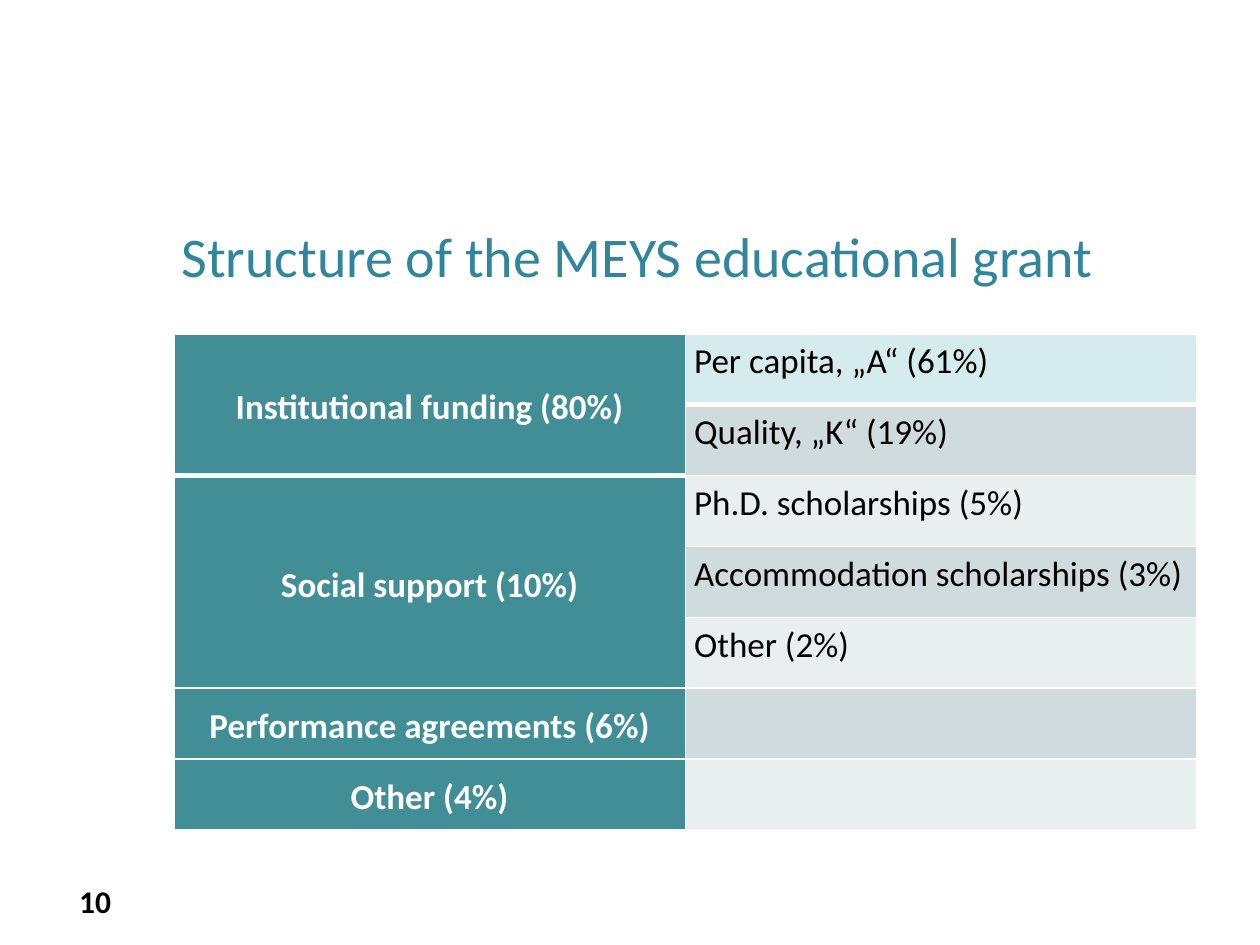
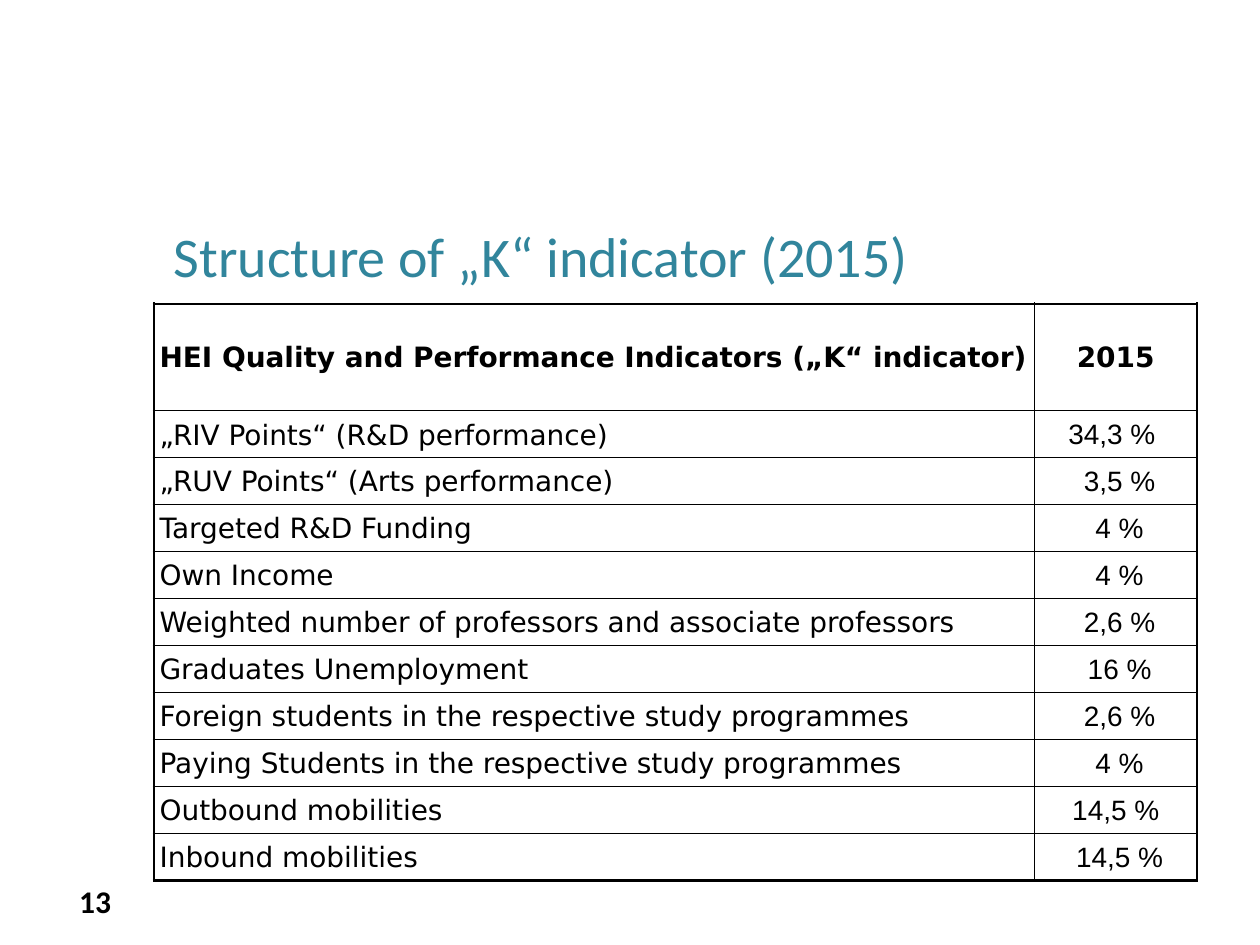
from lxml import etree
from pptx import Presentation
from pptx.dml.color import RGBColor
from pptx.enum.text import MSO_ANCHOR, PP_ALIGN
from pptx.oxml.ns import qn
from pptx.util import Pt

TOP, MIDDLE = MSO_ANCHOR.TOP, MSO_ANCHOR.MIDDLE
LEFT, CENTER = PP_ALIGN.LEFT, PP_ALIGN.CENTER
RIGHT, JUSTIFY = PP_ALIGN.RIGHT, PP_ALIGN.JUSTIFY

BLACK = RGBColor(0x00, 0x00, 0x00)
WHITE = RGBColor(0xFF, 0xFF, 0xFF)
BLUE = RGBColor(0x31, 0x85, 0x9C)
TEAL = RGBColor(0x41, 0x8E, 0x96)
MINT = RGBColor(0xD6, 0xEB, 0xED)
DARK = RGBColor(0xCF, 0xDB, 0xDD)
PALE = RGBColor(0xE9, 0xEE, 0xEF)

GRANTS = [
    ("Institutional funding (80%)", ["Per capita, „A“ (61%)", "Quality, „K“ (19%)"]),
    ("Social support (10%)", ["Ph.D. scholarships (5%)",
                              "Accommodation scholarships (3%)", "Other (2%)"]),
    ("Performance agreements (6%)", [""]),
    ("Other (4%)", [""]),
]

SHARES = [
    ("HEI Quality and Performance Indicators („K“ indicator)", "2015"),
    ("„RIV Points“ (R&D performance)", "34,3 % "),
    ("„RUV Points“ (Arts performance)", " 3,5 %"),
    ("Targeted R&D Funding", " 4 %"),
    ("Own Income", " 4 %"),
    ("Weighted number of professors and associate professors", " 2,6 %"),
    ("Graduates Unemployment", " 16 %"),
    ("Foreign students in the respective study programmes", " 2,6 %"),
    ("Paying Students in the respective study programmes", " 4 %"),
    ("Outbound mobilities", " 14,5 % "),
    ("Inbound mobilities", " 14,5 %"),
]


class Deck:
    face = "Calibri"

    def __init__(self):
        self.file = Presentation()
        self.file.slide_width, self.file.slide_height = Pt(720), Pt(540)
        self.slide = None

    def page(self, title, number, indent):
        self.slide = self.file.slides.add_slide(self.file.slide_layouts[6])
        self.text(number, (19.44, 500.4, 51.12, 28.8), 18, BLACK, True, RIGHT, MIDDLE)
        self.text(title, (87.84, 122.8, 596.16, 50), 32, BLUE, indent=indent)

    def style(self, para, text, size, color, bold=False, align=LEFT, face=face):
        para.text = text
        para.alignment = align
        font = para.font
        font.name, font.size, font.bold = face, Pt(size), bold
        font.color.rgb = color

    def text(self, text, place, size, color, bold=False, align=LEFT,
             anchor=TOP, indent=0):
        frame = self.slide.shapes.add_textbox(*map(Pt, place)).text_frame
        frame.word_wrap = True
        frame.vertical_anchor = anchor
        frame.margin_left = Pt(7.2 + indent)
        self.style(frame.paragraphs[0], text, size, color, bold, align)

    def table(self, left, top, cols, rows):
        grid = self.slide.shapes.add_table(
            len(rows), len(cols), Pt(left), Pt(top), Pt(sum(cols)), Pt(sum(rows))).table
        grid.first_row = grid.horz_banding = False
        for col, width in zip(grid.columns, cols):
            col.width = Pt(width)
        for row, height in zip(grid.rows, rows):
            row.height = Pt(height)
        return grid

    def cell(self, cell, text, size, color, bold, align, face, anchor,
             space, pad, fill, edge, widths):
        cell.margin_left = cell.margin_right = Pt(pad)
        cell.margin_top = cell.margin_bottom = Pt(0)
        cell.vertical_anchor = anchor
        para = cell.text_frame.paragraphs[0]
        self.style(para, text, size, color, bold, align, face)
        para.line_spacing = space
        if fill is None:
            cell.fill.background()
        else:
            cell.fill.solid()
            cell.fill.fore_color.rgb = fill
        props = cell._tc.get_or_add_tcPr()
        for spot, (side, width) in enumerate(zip("LRTB", widths)):
            line = etree.Element(qn(f"a:ln{side}"), w=str(Pt(width)))
            solid = etree.SubElement(line, qn("a:solidFill"))
            etree.SubElement(solid, qn("a:srgbClr"), val=str(edge))
            props.insert(spot, line)

    def grants(self):
        self.page("Structure of the MEYS educational grant", "10", 8.64)
        count = sum(len(parts) for _, parts in GRANTS)
        grid = self.table(99.36, 190.8, [292.32] * 2, [40.5] * count)
        row = 0
        for head, parts in GRANTS:
            last = row + len(parts) - 1
            if last > row:
                grid.cell(row, 0).merge(grid.cell(last, 0))
            self.grant(grid, row, 0, head, TEAL)
            for part in parts:
                fill = DARK if row % 2 else PALE if row else MINT
                self.grant(grid, row, 1, part, fill)
                row += 1

    def grant(self, grid, row, col, text, fill):
        color, align, anchor = ((BLACK, JUSTIFY, TOP) if col
                                else (WHITE, CENTER, MIDDLE))
        self.cell(grid.cell(row, col), text, 20, color, not col, align, self.face,
                  anchor, 1.15, 5, fill, WHITE, (1, 1, 1, 1 if row else 3))

    def shares(self):
        self.page("Structure of „K“ indicator (2015)", "13", 4.32)
        end = len(SHARES) - 1
        grid = self.table(87.84, 173.5, [503.3, 92.86], [61.2] + [26.86] * end)
        for row, pair in enumerate(SHARES):
            for col, text in enumerate(pair):
                outer = (col == 0, col == 1, row == 0, row == end)
                face = "Arial" if row and col else "DejaVu Sans"
                align = CENTER if col else JUSTIFY if row else LEFT
                self.cell(grid.cell(row, col), text, 16, BLACK, row == 0, align, face,
                          MIDDLE, 1.07, 3.4, None, BLACK,
                          [1.5 if out else 1 for out in outer])


def main():
    deck = Deck()
    deck.grants()
    deck.shares()
    deck.file.save("out.pptx")


if __name__ == "__main__":
    main()
